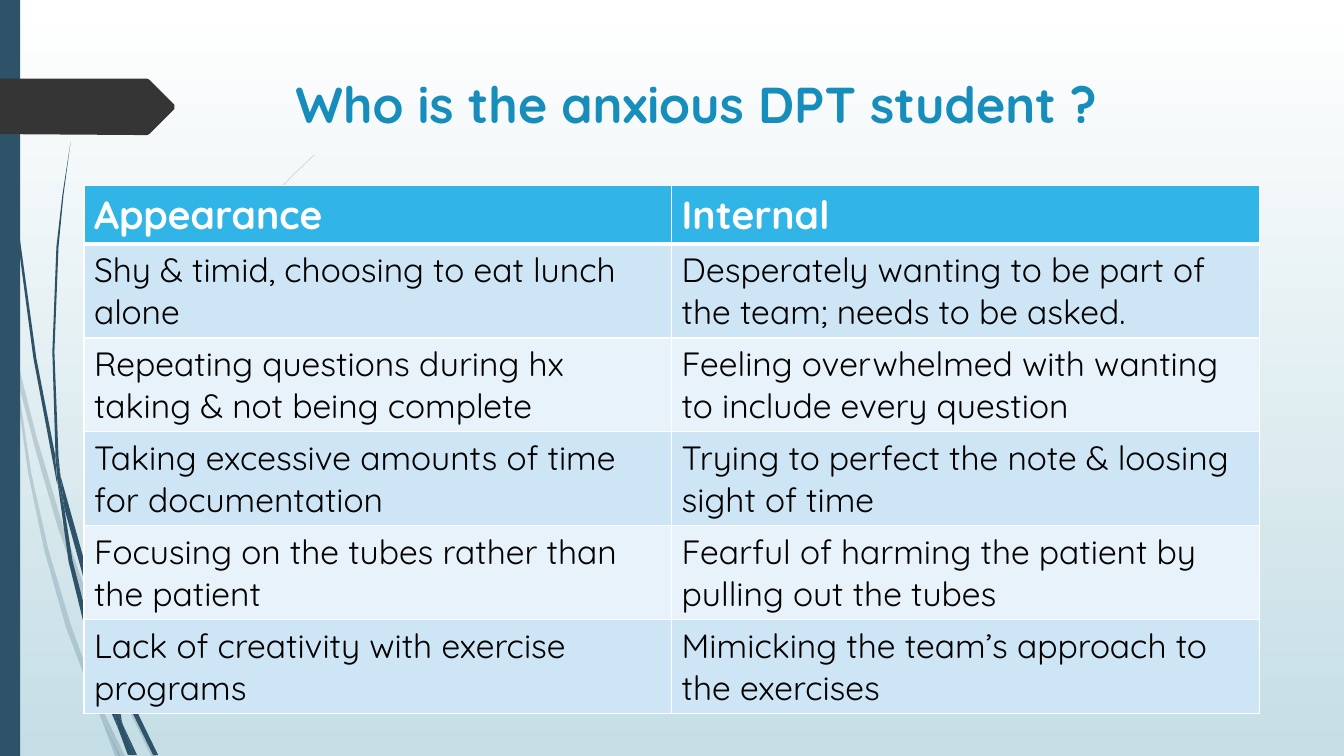
from dataclasses import dataclass

from lxml.etree import SubElement
from pptx import Presentation
from pptx.dml.color import RGBColor
from pptx.enum.shapes import MSO_SHAPE
from pptx.oxml.ns import qn
from pptx.shapes.autoshape import Shape
from pptx.slide import Slide
from pptx.table import _Cell
from pptx.util import Pt

Point = tuple[float, float]


@dataclass(frozen=True)
class Theme:
    font: str = "Quicksand"
    title_size: float = 36
    head_size: float = 28
    body_size: float = 24
    title: str = "178DBB"
    navy: str = "2E5369"
    tag: str = "353535"
    head: str = "31B4E6"
    bands: tuple[str, str] = ("CEE5F5", "E8F2FA")
    white: str = "FFFFFF"
    black: str = "000000"
    mist: str = "C5DEE5"


@dataclass(frozen=True)
class Blade:
    """One piece of a grass stem, outlined by its corners in points."""
    points: list[Point]
    alpha: int = 100


@dataclass(frozen=True)
class Style:
    size: float
    color: str
    bold: bool


THEME = Theme()
PALE = 20

PALE_STEMS: list[list[Point]] = [
    [(41, 375.8), (60.5, 431.3), (61.2, 421.9), (44.6, 374.4), (26, 311.8),
     (10.1, 248.4), (12.2, 270.7), (25.9, 323.3)],
    [(66.2, 437), (63.4, 429.1), (63.4, 439.2), (88.6, 499.7), (108, 540),
     (111.6, 540), (91.4, 498.2)],
    [(85.7, 540), (89.3, 540), (75.6, 511.9)],
    [(67, 491.8), (50.4, 445.7), (34.5, 392.2), (22.3, 337.7), (12.2, 270.7),
     (7.9, 252), (20.2, 338.4), (31.6, 393), (46.8, 447.1), (66.2, 499),
     (72.7, 514.1), (71.3, 509)],
    [(63.4, 420.5), (79.2, 332.6), (115.2, 251.3), (164.9, 176.4), (193, 142.6),
     (208.8, 126), (224.6, 110.9), (224.6, 110.2), (208.1, 126), (193, 141.8),
     (164.2, 175.7), (113.8, 250.6), (77, 331.9), (61.2, 420.5), (61.2, 421.9),
     (63.4, 429.1)],
    [(72.7, 514.1), (82.1, 540), (85.7, 540)],
    [(69.1, 498.2), (67, 491.8), (71.3, 509), (72.7, 514.1), (85, 540),
     (85.7, 540), (75.6, 511.9)],
]
DARK_STEMS: list[list[Point]] = [
    [(5, 79.2), (12.2, 167.8), (23.8, 255.6), (40.3, 343.4), (41, 346.3),
     (39.6, 329), (39.6, 326.2), (25.9, 255.6), (13.7, 167), (5.8, 78.5),
     (3.6, 34.6), (2.9, 0), (2.2, 0), (2.9, 34.6)],
    [(63.4, 426.2), (76.3, 464.4), (76.3, 454.3), (67, 424.8), (43.2, 339.8),
     (46.1, 363.6)],
    [(81.4, 467.3), (79.2, 461.5), (79.9, 472.3), (95, 509.8), (109.4, 539.3),
     (113, 539.3), (97.9, 508.3)],
    [(79.2, 497.5), (70.6, 473), (51.8, 400.3), (46.1, 363.6), (41, 343.4),
     (49, 401), (67, 474.5), (79.9, 509.8), (84.2, 519.8), (83.5, 516.2)],
    [(43.2, 339.8), (41.8, 326.2), (38.9, 251.3), (41.8, 176.4), (45.4, 139),
     (50.4, 101.5), (44.6, 139), (40.3, 176.4), (37.4, 251.3), (39.6, 323.3)],
    [(95.8, 539.3), (97.9, 539.3), (87.8, 517.7)],
    [(41, 343.4), (46.1, 363.6), (43.2, 339.8), (39.6, 323.3), (39.6, 326.2)],
    [(84.2, 519.8), (91.4, 539.3), (94.3, 539.3)],
    [(76.3, 464.4), (79.2, 497.5), (83.5, 508.3), (87.8, 517.7), (87.1, 515.5),
     (79.9, 472.3), (78.5, 468.7)],
    [(83.5, 508.3), (79.2, 497.5), (83.5, 516.2), (84.2, 519.8), (93.6, 539.3),
     (95.8, 539.3), (87.8, 517.7)],
]
BLADES = [Blade(p, PALE) for p in PALE_STEMS] + [Blade(p) for p in DARK_STEMS]
TAG: list[Point] = [(0, 56.2), (105.1, 56.2), (106.6, 56.9), (124.6, 74.9),
                    (124.6, 77.8), (106.6, 95.8), (105.1, 96.5), (0, 95.8)]

ROWS: list[tuple[str, str]] = [
    ("Appearance", "Internal"),
    ("Shy & timid, choosing to eat lunch alone",
     "Desperately wanting to be part of the team; needs to be asked."),
    ("Repeating questions during hx taking & not being complete",
     "Feeling overwhelmed with wanting to include every question"),
    ("Taking excessive amounts of time for documentation",
     "Trying to perfect the note & loosing sight of time"),
    ("Focusing on the tubes rather than the patient",
     "Fearful of harming the patient by pulling out the tubes"),
    ("Lack of creativity with exercise programs",
     "Mimicking the team’s approach to the exercises"),
]


def rgb(color: str) -> RGBColor:
    return RGBColor.from_string(color)


def paint(shape: Shape, color: str, alpha: int = 100) -> None:
    shape.shadow.inherit = False
    shape.line.fill.background()
    shape.fill.solid()
    shape.fill.fore_color.rgb = rgb(color)
    if alpha < 100:
        tint = shape.fill._xPr.find(qn("a:solidFill"))[0]
        SubElement(tint, qn("a:alpha"), val=str(alpha * 1000))


def outline(slide: Slide, points: list[Point]) -> Shape:
    first, *rest = [(Pt(x), Pt(y)) for x, y in points]
    pen = slide.shapes.build_freeform(*first)
    pen.add_line_segments(rest, close=True)
    return pen.convert_to_shape()


def write(frame, text: str, style: Style) -> None:
    frame.word_wrap = True
    par = frame.paragraphs[0]
    par.text = text
    font = par.font
    font.name, font.size, font.bold = THEME.font, Pt(style.size), style.bold
    font.color.rgb = rgb(style.color)


def edge(cell: _Cell, top: float, bottom: float) -> None:
    """Give the cell white borders, with 1 pt at both sides."""
    props = cell._tc.get_or_add_tcPr()
    widths = {"lnL": 1, "lnR": 1, "lnT": top, "lnB": bottom}
    for spot, (name, width) in enumerate(widths.items()):
        line = SubElement(props, qn(f"a:{name}"), w=str(Pt(width)))
        fill = SubElement(line, qn("a:solidFill"))
        SubElement(fill, qn("a:srgbClr"), val=THEME.white)
        props.insert(spot, line)


def add_grid(slide: Slide) -> None:
    head = Style(THEME.head_size, THEME.white, True)
    body = Style(THEME.body_size, THEME.black, False)
    frame = slide.shapes.add_table(len(ROWS), 2, Pt(60), Pt(132.5),
                                   Pt(839.5), Pt(377))
    grid = frame.table
    for row, texts in enumerate(ROWS):
        grid.rows[row].height = Pt(67 if row else 42)
        for col, text in enumerate(texts):
            cell = grid.cell(row, col)
            cell.fill.solid()
            shade = THEME.bands[(row - 1) % 2] if row else THEME.head
            cell.fill.fore_color.rgb = rgb(shade)
            write(cell.text_frame, text, body if row else head)
            edge(cell, 3 if row == 1 else 1, 1 if row else 3)


def set_back(slide: Slide) -> None:
    fill = slide.background.fill
    fill.gradient()
    fill.gradient_angle = 270
    for stop, color, place in zip(fill.gradient_stops,
                                  (THEME.white, THEME.mist), (0, 1)):
        stop.color.rgb = rgb(color)
        stop.position = place


def main() -> None:
    deck = Presentation()
    deck.slide_width, deck.slide_height = Pt(960), Pt(540)
    slide = deck.slides.add_slide(deck.slide_layouts[6])
    set_back(slide)
    for blade in BLADES:
        paint(outline(slide, blade.points), THEME.navy, blade.alpha)
    bar = slide.shapes.add_shape(MSO_SHAPE.RECTANGLE, 0, 0, Pt(14.4), Pt(540))
    paint(bar, THEME.navy)
    paint(outline(slide, TAG), THEME.tag)
    title = slide.shapes.add_textbox(Pt(204), Pt(49), Pt(701), Pt(101))
    write(title.text_frame, "Who is the anxious DPT student ?",
          Style(THEME.title_size, THEME.title, True))
    add_grid(slide)
    deck.save("out.pptx")


if __name__ == "__main__":
    main()
